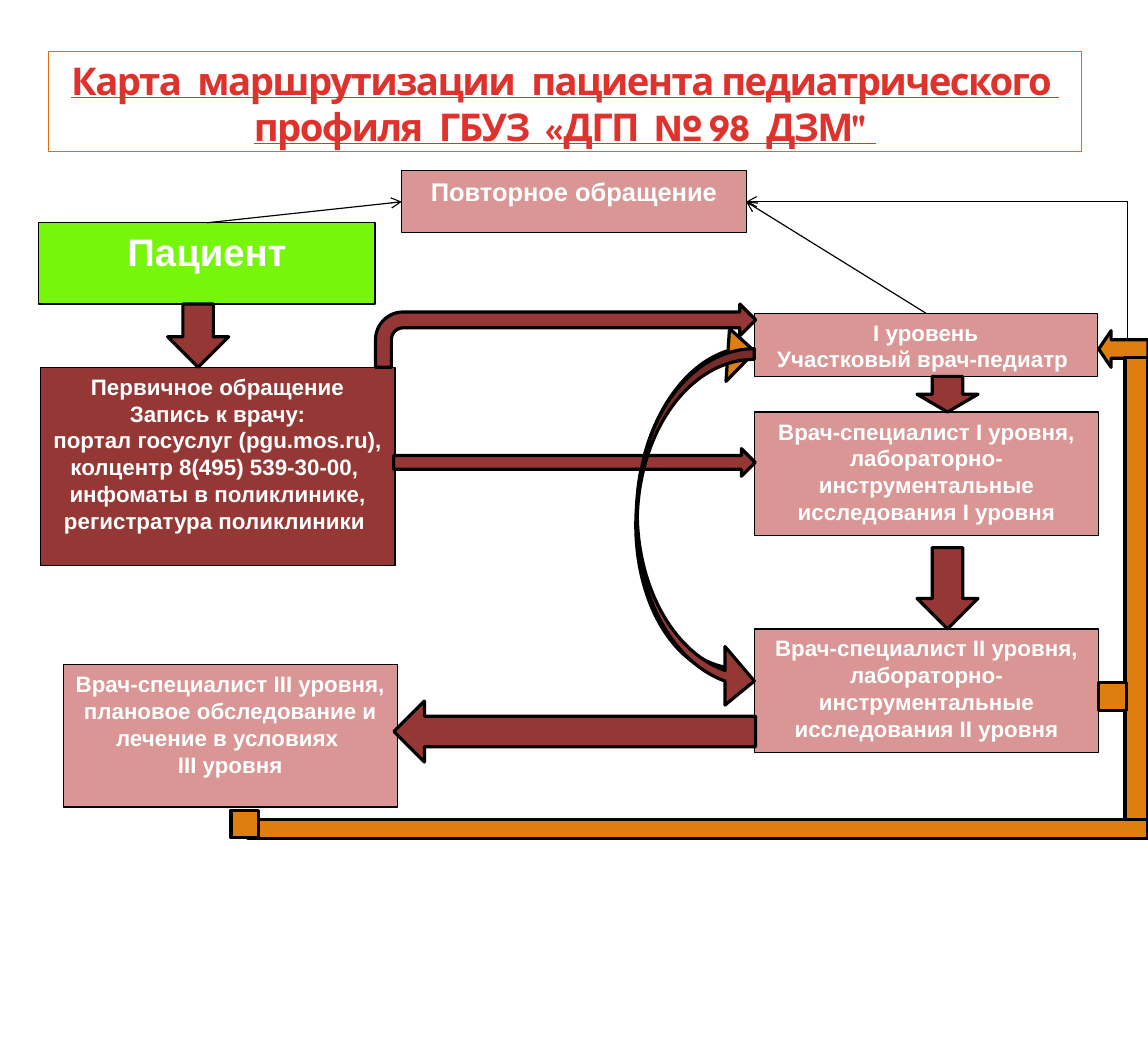
from dataclasses import dataclass

from lxml import etree
from pptx import Presentation
from pptx.dml.color import RGBColor
from pptx.enum.shapes import MSO_CONNECTOR, MSO_SHAPE
from pptx.enum.text import MSO_ANCHOR, PP_ALIGN
from pptx.oxml.ns import qn
from pptx.util import Cm, Pt

RECT = MSO_SHAPE.RECTANGLE
DOWN = MSO_SHAPE.DOWN_ARROW
LEFT = MSO_SHAPE.LEFT_ARROW
RIGHT = MSO_SHAPE.RIGHT_ARROW
BENT = MSO_SHAPE.BENT_ARROW
CURVED = MSO_SHAPE.CURVED_RIGHT_ARROW
STRAIGHT = MSO_CONNECTOR.STRAIGHT
ELBOW = MSO_CONNECTOR.ELBOW
CENTER = PP_ALIGN.CENTER
TOP = MSO_ANCHOR.TOP
TOP_SIDE, LEFT_SIDE, RIGHT_SIDE = 0, 1, 3


@dataclass(frozen=True)
class Theme:
    black: str = "000000"
    white: str = "FFFFFF"
    red: str = "E0322D"
    orange_line: str = "E46C0A"
    orange: str = "DD7E0E"
    green: str = "75F60A"
    pink: str = "D99694"
    maroon: str = "953735"
    font: str = "Arial"
    title_font: str = "League Spartan"
    large: int = 24
    medium: int = 16
    body: int = 14
    thin: float = 0.75
    thick: float = 2


class RouteMap:
    def __init__(self, slide, theme):
        self.slide = slide
        self.theme = theme

    def shape(self, kind, bounds, fill, line, width):
        shape = self.slide.shapes.add_shape(kind, *map(Cm, bounds))
        shape.shadow.inherit = False
        if fill:
            shape.fill.solid()
            shape.fill.fore_color.rgb = RGBColor.from_string(fill)
        else:
            shape.fill.background()
        shape.line.color.rgb = RGBColor.from_string(line)
        shape.line.width = Pt(width)
        return shape

    def text(self, shape, text, size, color, font):
        frame = shape.text_frame
        frame.word_wrap = True
        frame.vertical_anchor = TOP
        frame.text = text
        for paragraph in frame.paragraphs:
            paragraph.alignment = CENTER
            for run in paragraph.runs:
                run.font.size = Pt(size)
                run.font.bold = True
                run.font.name = font
                run.font.color.rgb = RGBColor.from_string(color)

    def title(self, bounds, text):
        theme = self.theme
        heading = self.shape(RECT, bounds, None, theme.orange_line, theme.thin)
        self.text(heading, text, theme.large, theme.red, theme.title_font)
        run = heading.text_frame.paragraphs[0].runs[0]
        run.font.underline = True
        run.font.element.set("spc", "-100") if hasattr(run.font, "element") else run._r.get_or_add_rPr().set("spc", "-100")

    def step(self, bounds, text, fill, size):
        theme = self.theme
        box = self.shape(RECT, bounds, fill, theme.black, theme.thin)
        self.text(box, text, size, theme.white, theme.font)
        return box

    def arrow(self, kind, bounds, fill, adjustments=(), rotation=0, flip=False):
        arrow = self.shape(kind, bounds, fill, self.theme.black, self.theme.thick)
        for index, value in enumerate(adjustments):
            arrow.adjustments[index] = value
        arrow.rotation = rotation
        if flip:
            arrow.element.spPr.find(qn("a:xfrm")).set("flipH", "1")

    def link(self, kind, start, start_side, end, end_side, bend=None):
        link = self.slide.shapes.add_connector(kind, 0, 0, 0, 0)
        link.begin_connect(start, start_side)
        link.end_connect(end, end_side)
        link.line.color.rgb = RGBColor.from_string(self.theme.black)
        link.line.width = Pt(self.theme.thin)
        properties = link.element.spPr
        outline = properties.find(qn("a:ln"))
        etree.SubElement(outline, qn("a:tailEnd"), type="arrow")
        etree.SubElement(properties, qn("a:effectLst"))
        if bend is not None:
            geometry = properties.find(qn("a:prstGeom"))
            guides = geometry.find(qn("a:avLst"))
            if guides is None:
                guides = etree.SubElement(geometry, qn("a:avLst"))
            etree.SubElement(guides, qn("a:gd"), name="adj1", fmla=f"val {bend}")


def main():
    presentation = Presentation()
    presentation.slide_width = Cm(25.4)
    presentation.slide_height = Cm(23.06)
    slide = presentation.slides.add_slide(presentation.slide_layouts[6])
    theme = Theme()
    route = RouteMap(slide, theme)

    route.arrow(CURVED, (14.1, 7.11, 2.39, 7.8), theme.orange,
                (0.08, 0.49, 0.25), 183.8, True)
    route.title((1.07, 1.14, 22.86, 2.21),
                "Карта  маршрутизации  пациента педиатрического  профиля  ГБУЗ  «ДГП  № 98  ДЗМ\" ")
    patient = route.step((0.86, 4.93, 7.44, 1.8), "Пациент", theme.green, theme.large)
    pediatrician = route.step((16.69, 6.93, 7.59, 1.4),
                              "I уровень\nУчастковый врач-педиатр ", theme.pink, theme.body)
    route.step((0.89, 8.13, 7.85, 4.39),
               "Первичное обращение\nЗапись к врачу:\n"
               "портал госуслуг (pgu.mos.ru),\nколцентр 8(495) 539-30-00, \n"
               "инфоматы в поликлинике, регистратура поликлиники ",
               theme.maroon, theme.body)
    specialists = [
        route.step((16.69, top, 7.62, 2.74),
                   f"Врач-специалист {level} уровня, лабораторно-инструментальные "
                   f"исследования {level} уровня", theme.pink, theme.body)
        for level, top in (("I", 9.12), ("II", 13.92))
    ]
    route.step((1.4, 14.71, 7.39, 3.15),
               "Врач-специалист III уровня, плановое обследование и лечение в условиях \n"
               "III уровня", theme.pink, theme.body)
    repeat_visit = route.step((8.89, 3.78, 7.62, 1.37), "Повторное обращение",
                              theme.pink, theme.medium)

    route.link(STRAIGHT, pediatrician, TOP_SIDE, repeat_visit, RIGHT_SIDE)
    route.link(ELBOW, specialists[1], RIGHT_SIDE, repeat_visit, RIGHT_SIDE, -8100)
    route.link(STRAIGHT, patient, TOP_SIDE, repeat_visit, LEFT_SIDE)

    for left, top, height in ((20.29, 8.33, 0.79), (20.29, 12.12, 1.8), (3.71, 6.73, 1.4)):
        route.arrow(DOWN, (left, top, 1.35, height), theme.maroon)
    route.arrow(DOWN, (12.04, 12.19, 1.35, 8), theme.maroon, rotation=90)
    route.arrow(RIGHT, (8.71, 9.93, 8, 0.61), theme.maroon)
    route.arrow(CURVED, (14.1, 7.72, 2.59, 8), theme.maroon, (0.09, 0.5, 0.25))
    route.arrow(BENT, (8.31, 6.73, 8.41, 1.4), theme.maroon)

    route.arrow(LEFT, (24.31, 7.32, 1.09, 0.81), theme.orange, (0.5, 0.34))
    for return_path in ((24.89, 7.92, 0.51, 10.21), (5.49, 18.14, 19.91, 0.41),
                        (5.11, 17.93, 0.61, 0.61), (24.31, 15.11, 0.61, 0.61)):
        route.shape(RECT, return_path, theme.orange, theme.black, theme.thick)

    presentation.save("out.pptx")


if __name__ == "__main__":
    main()
